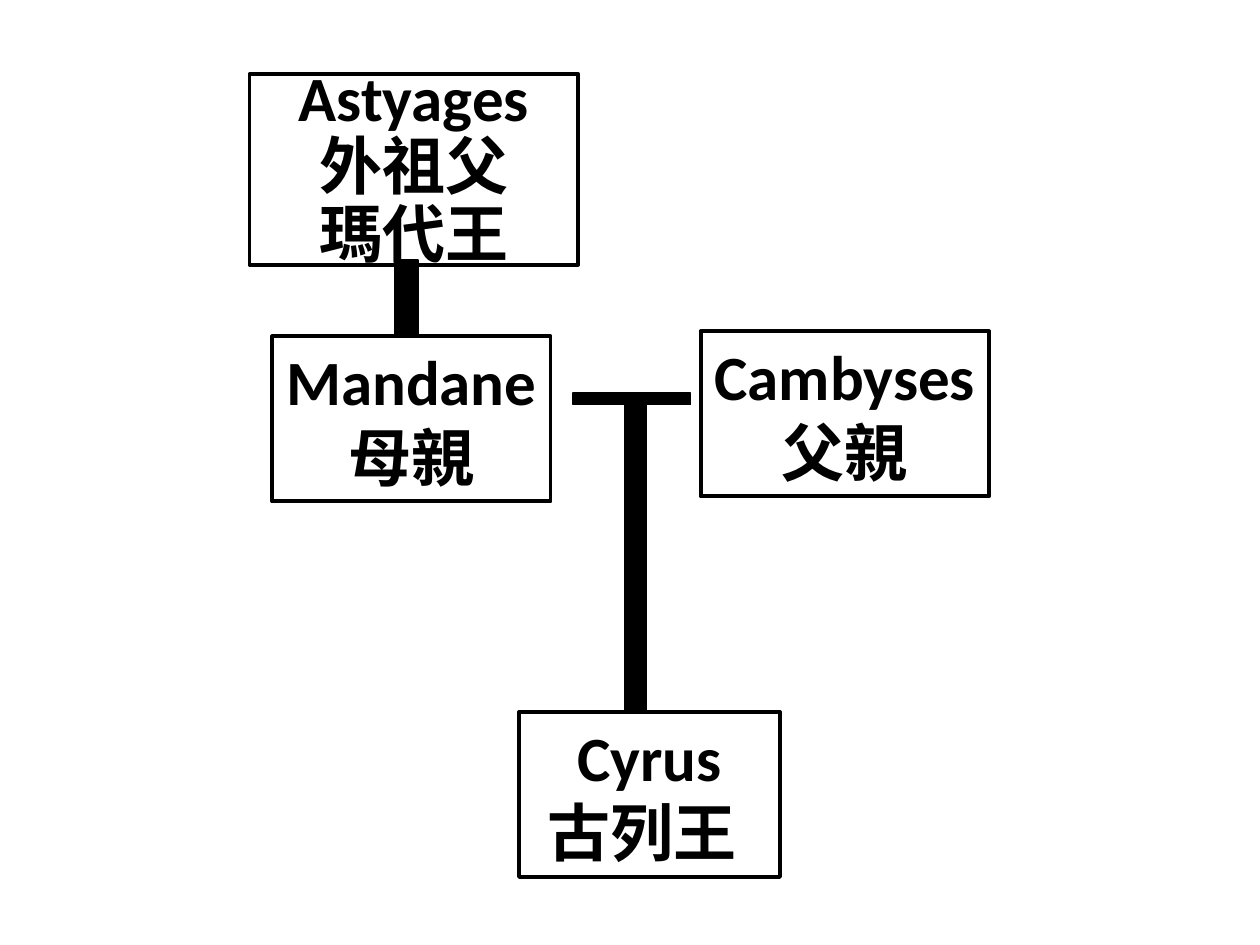
from pptx import Presentation
from pptx.dml.color import RGBColor
from pptx.enum.shapes import MSO_SHAPE
from pptx.enum.text import MSO_ANCHOR, MSO_AUTO_SIZE, PP_ALIGN
from pptx.util import Inches, Pt

BLACK = RGBColor(0, 0, 0)
MINUS = MSO_SHAPE.MATH_MINUS
MIDDLE = MSO_ANCHOR.MIDDLE
CENTER = PP_ALIGN.CENTER
NO_FIT, GROW = MSO_AUTO_SIZE.NONE, MSO_AUTO_SIZE.SHAPE_TO_FIT_TEXT


class FamilyTree:
    font = "Calibri"
    size = Pt(36)
    border = Pt(2.25)

    def __init__(self, slide):
        self.slide = slide

    def outline(self, sp, width):
        sp.line.color.rgb = BLACK
        sp.line.width = width

    def run(self, p, text):
        r = p.add_run()
        r.text = text
        r.font.name = self.font
        r.font.size = self.size
        r.font.bold = True
        r.font.color.rgb = BLACK

    def title(self, x, y, w, h, lines):
        sp = self.slide.shapes.title
        sp.left, sp.top, sp.width, sp.height = map(Inches, (x, y, w, h))
        self.outline(sp, self.border)
        tf = sp.text_frame
        tf.auto_size = NO_FIT
        tf.vertical_anchor = MIDDLE
        p = tf.paragraphs[0]
        p.alignment = CENTER
        p.line_spacing = 0.9
        for i, line in enumerate(lines):
            if i:
                p.add_line_break()
            self.run(p, line)

    def person(self, x, y, w, name, role, wrap=False):
        sp = self.slide.shapes.add_textbox(Inches(x), Inches(y), Inches(w), Inches(1.31))
        self.outline(sp, self.border)
        tf = sp.text_frame
        tf.word_wrap = wrap
        tf.auto_size = GROW
        for p, text in ((tf.paragraphs[0], name), (tf.add_paragraph(), role)):
            p.alignment = CENTER
            self.run(p, text)

    def bar(self, x, y, w, h, rotation=0):
        sp = self.slide.shapes.add_shape(MINUS, Inches(x), Inches(y), Inches(w), Inches(h))
        sp.rotation = rotation
        sp.shadow.inherit = False
        sp.fill.solid()
        sp.fill.fore_color.rgb = BLACK
        self.outline(sp, Pt(1))


def main():
    prs = Presentation()
    prs.slide_width, prs.slide_height = Inches(10), Inches(7.5)
    tree = FamilyTree(prs.slides.add_slide(prs.slide_layouts[5]))
    tree.title(1.98, 0.59, 2.61, 1.51, ("Astyages", "外祖父", "瑪代王"))
    tree.person(2.16, 2.67, 2.21, "Mandane", "母親")
    tree.person(5.56, 2.63, 2.29, "Cambyses", "父親")
    tree.person(4.12, 5.65, 2.07, "Cyrus", "古列王 ", wrap=True)
    tree.bar(4.38, 2.97, 1.27, 0.39)
    tree.bar(3.37, 4.06, 3.34, 0.72, rotation=90)
    tree.bar(2.81, 1.99, 0.83, 0.76, rotation=90)
    prs.save("out.pptx")


if __name__ == "__main__":
    main()
